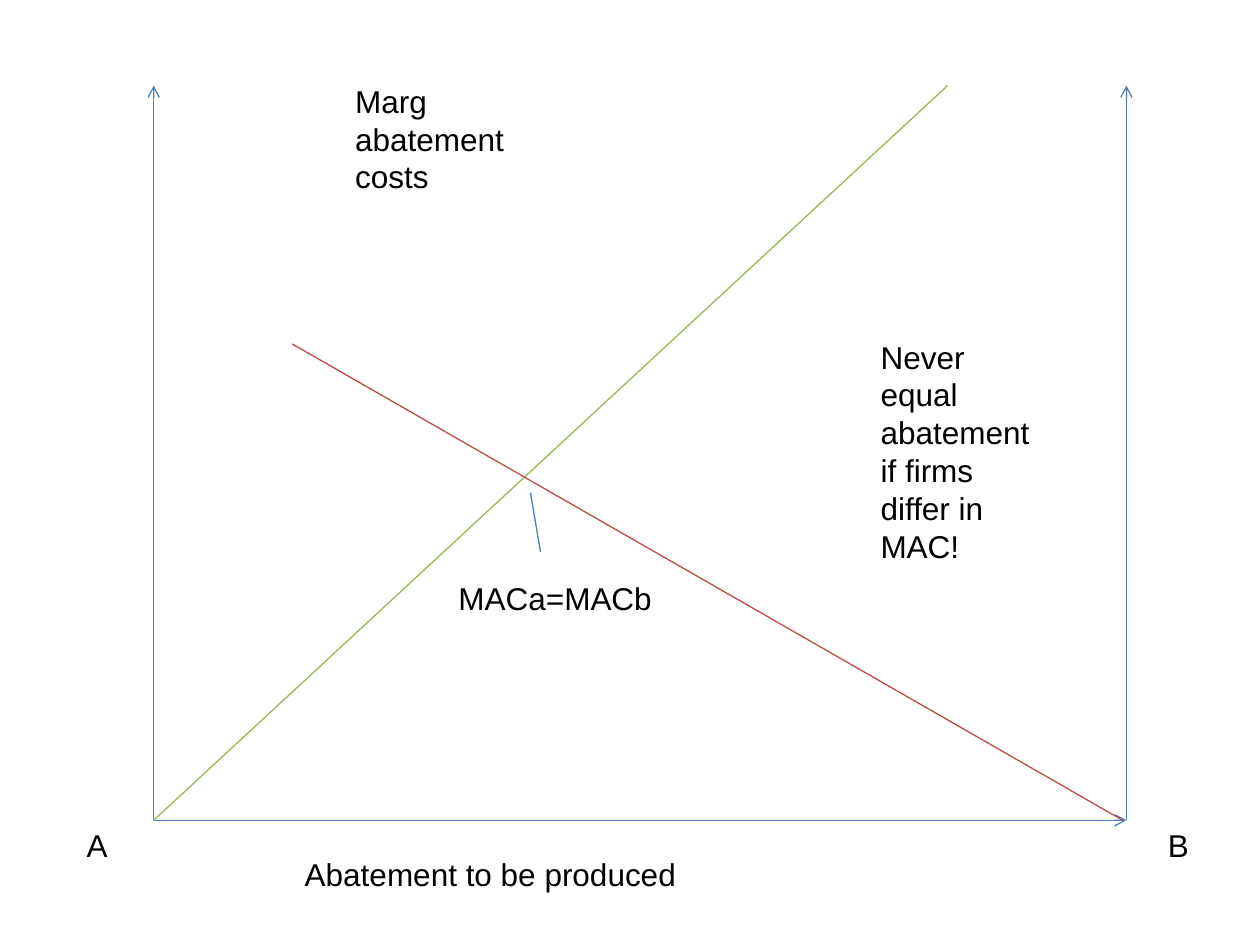
from dataclasses import dataclass

from lxml.etree import SubElement
from pptx import Presentation
from pptx.dml.color import RGBColor
from pptx.enum.shapes import MSO_CONNECTOR as Connector
from pptx.enum.text import MSO_AUTO_SIZE as AutoSize
from pptx.oxml.ns import qn
from pptx.util import Inches, Pt


@dataclass(frozen=True)
class Theme:
    """Colours, font and sizes of the slide."""
    font: str = "Arial"
    text_size: float = 18
    line_width: float = 0.75
    text: str = "000000"
    axis: str = "4B7EBC"
    cost_a: str = "98B955"
    cost_b: str = "BF4C48"


@dataclass(frozen=True)
class Box:
    """A region of the slide in inches."""
    left: float
    top: float
    width: float
    height: float


THEME = Theme()


def add_line(slide, box, start, end, color, arrow=False):
    """Draw a line between two points measured from the corner of the box."""
    points = [Inches(value) for x, y in (start, end)
              for value in (box.left + x, box.top + y)]
    connector = slide.shapes.add_connector(Connector.STRAIGHT, *points)
    connector.line.color.rgb = RGBColor.from_string(color)
    connector.line.width = Pt(THEME.line_width)
    if arrow:
        SubElement(connector.line._get_or_add_ln(), qn("a:tailEnd"), type="arrow")
    SubElement(connector._element.spPr, qn("a:effectLst"))


def add_label(slide, box, text, left, top, width, height):
    """Write a wrapped label measured from the corner of the box."""
    shape = slide.shapes.add_textbox(
        Inches(box.left + left), Inches(box.top + top), Inches(width), Inches(height))
    frame = shape.text_frame
    frame.word_wrap = True
    frame.auto_size = AutoSize.SHAPE_TO_FIT_TEXT
    run = frame.paragraphs[0].add_run()
    run.text = text
    run.font.name = THEME.font
    run.font.size = Pt(THEME.text_size)
    run.font.color.rgb = RGBColor.from_string(THEME.text)


def add_axes(slide, box):
    """Draw the two cost axes, the abatement axis and their labels."""
    origin_a, origin_b = (0, box.height), (box.width, box.height)
    for start, end in ((origin_a, (0, 0)),
                       (origin_a, origin_b),
                       (origin_b, (box.width, 0))):
        add_line(slide, box, start, end, THEME.axis, arrow=True)
    add_label(slide, box, "Abatement to be produced", 1.1, box.height + 0.23, 5.59, 0.4)
    add_label(slide, box, "A", -0.63, box.height, 0.63, 0.4)
    add_label(slide, box, "B", box.width + 0.23, box.height, 0.47, 0.4)


def add_cost_curves(slide, box):
    """Draw the marginal cost curves with their notes and crossing point."""
    add_line(slide, box, (0, box.height), (6.3, 0), THEME.cost_a)
    add_line(slide, box, (box.width - 0.03, box.height), (1.1, 2.05), THEME.cost_b)
    add_label(slide, box, "Marg abatement costs", 1.5, -0.08, 1.65, 1.01)
    add_label(slide, box, "Never equal abatement if firms differ in MAC!",
              5.67, 1.95, 1.42, 1.92)
    add_label(slide, box, "MACa=MACb", 2.32, 3.87, 2.28, 0.4)
    add_line(slide, box, (3.07, 3.7), (2.99, 3.23), THEME.axis)


def main():
    """Build and save the slide."""
    presentation = Presentation()
    presentation.slide_width = Inches(10)
    presentation.slide_height = Inches(7.5)
    slide = presentation.slides.add_slide(presentation.slide_layouts[6])
    diagram = Box(1.22, 0.68, 7.72, 5.83)
    add_axes(slide, diagram)
    add_cost_curves(slide, diagram)
    presentation.save("out.pptx")


if __name__ == "__main__":
    main()
